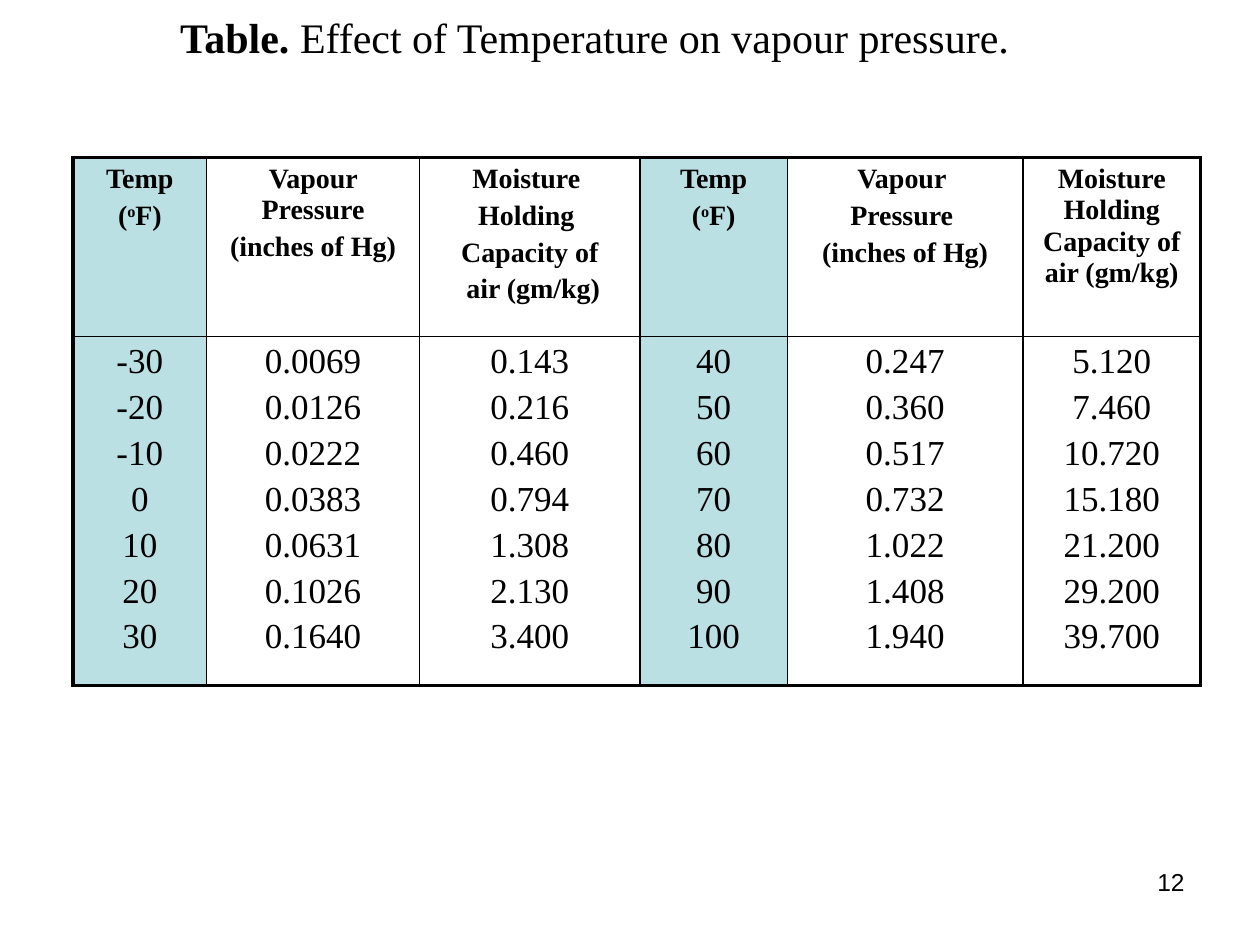
from lxml.etree import SubElement
from pptx import Presentation
from pptx.dml.color import RGBColor
from pptx.enum.text import MSO_ANCHOR, PP_ALIGN
from pptx.oxml.ns import qn
from pptx.util import Inches, Pt

BLACK = RGBColor(0x00, 0x00, 0x00)
PALE_TEAL = RGBColor(0xBB, 0xE0, 0xE3)
SERIF, SANS = "Times New Roman", "Arial"
THIN, THICK = 1, 2.25

COL_WIDTHS = [1.06, 1.69, 1.75, 1.17, 1.87, 1.41]
ROW_HEIGHTS = [1.42, 2.77]
TEMP_COLS = (0, 3)
TEMP_HEADER = ["Temp", "(^o^F)"]  # carets enclose superscript
HEADERS = [
    TEMP_HEADER,
    ["Vapour Pressure", "(inches of Hg)"],
    ["Moisture ", "Holding ", "Capacity of", " air (gm/kg)"],
    TEMP_HEADER,
    ["Vapour ", "Pressure ", "(inches of Hg)"],
    ["Moisture Holding Capacity of air (gm/kg)"],
]
READINGS = [
    ["-30", "-20", "-10", "0", "10", "20", "30"],
    ["0.0069", "0.0126", "0.0222", "0.0383", "0.0631", "0.1026", "0.1640"],
    ["0.143", "0.216", "0.460", "0.794", "1.308", "2.130", "3.400"],
    ["40", "50", "60", "70", "80", "90", "100"],
    ["0.247", "0.360", "0.517", "0.732", "1.022", "1.408", "1.940"],
    ["5.120", "7.460", "10.720", "15.180", "21.200", "29.200", "39.700"],
]


def style(p, name, size, align, bold=None):
    p.alignment = align
    p.font.name, p.font.size, p.font.bold = name, Pt(size), bold
    p.font.color.rgb = BLACK


def add_title(s):
    title = s.shapes.title
    title.left, title.top = Inches(1.33), 0
    title.width, title.height = Inches(6.93), Inches(0.5)
    tf = title.text_frame
    tf.word_wrap = False
    tf.vertical_anchor = MSO_ANCHOR.TOP
    tf.margin_top = Inches(0.09)
    p = tf.paragraphs[0]
    style(p, SERIF, 24, PP_ALIGN.LEFT)
    for text, bold in (("Table. ", True),
                       ("Effect of Temperature on vapour pressure.", False)):
        r = p.add_run()
        r.text, r.font.bold = text, bold


def set_borders(cell, widths):
    """Draw black borders; widths are points for left, right, top, bottom."""
    tcPr = cell._tc.get_or_add_tcPr()
    for side, width in zip("LRTB", widths):
        ln = SubElement(tcPr, qn(f"a:ln{side}"), w=str(Pt(width)))
        fill = SubElement(ln, qn("a:solidFill"))
        SubElement(fill, qn("a:srgbClr"), val=str(BLACK))


def fill_cell(cell, lines, size, bold):
    tf = cell.text_frame
    for i, line in enumerate(lines):
        p = tf.add_paragraph() if i else tf.paragraphs[0]
        style(p, SERIF, size, PP_ALIGN.CENTER, bold)
        if i:
            p.space_before = Pt(size * 0.2)
        for j, text in enumerate(line.split("^")):
            r = p.add_run()
            r.text = text
            if j % 2:
                r.font._element.set("baseline", "30000")


def add_vapour_table(s):
    rows, cols = len(ROW_HEIGHTS), len(COL_WIDTHS)
    table = s.shapes.add_table(
        rows, cols, Inches(0.58), Inches(1.25),
        Inches(sum(COL_WIDTHS)), Inches(sum(ROW_HEIGHTS))).table
    table.first_row = table.horz_banding = False
    for column, width in zip(table.columns, COL_WIDTHS):
        column.width = Inches(width)
    for row, height in zip(table.rows, ROW_HEIGHTS):
        row.height = Inches(height)
    row_formats = [(HEADERS, 16, True), (READINGS, 20, False)]
    for i, (contents, size, bold) in enumerate(row_formats):
        for j, lines in enumerate(contents):
            cell = table.cell(i, j)
            outer = (j == 0, j == cols - 1, i == 0, i == rows - 1)
            set_borders(cell, [THICK if edge else THIN for edge in outer])
            if j in TEMP_COLS:
                cell.fill.solid()
                cell.fill.fore_color.rgb = PALE_TEAL
            else:
                cell.fill.background()
            fill_cell(cell, lines, size, bold)


def add_page_number(s, number):
    box = s.shapes.add_textbox(Inches(7.17), Inches(6.83),
                               Inches(2.33), Inches(0.52))
    tf = box.text_frame
    tf.word_wrap = True
    p = tf.paragraphs[0]
    p.text = number
    style(p, SANS, 14, PP_ALIGN.RIGHT)


def main():
    prs = Presentation()
    prs.slide_width, prs.slide_height = Inches(10), Inches(7.5)
    s = prs.slides.add_slide(prs.slide_layouts[5])
    add_title(s)
    add_vapour_table(s)
    add_page_number(s, "12")
    prs.save("out.pptx")


if __name__ == "__main__":
    main()
